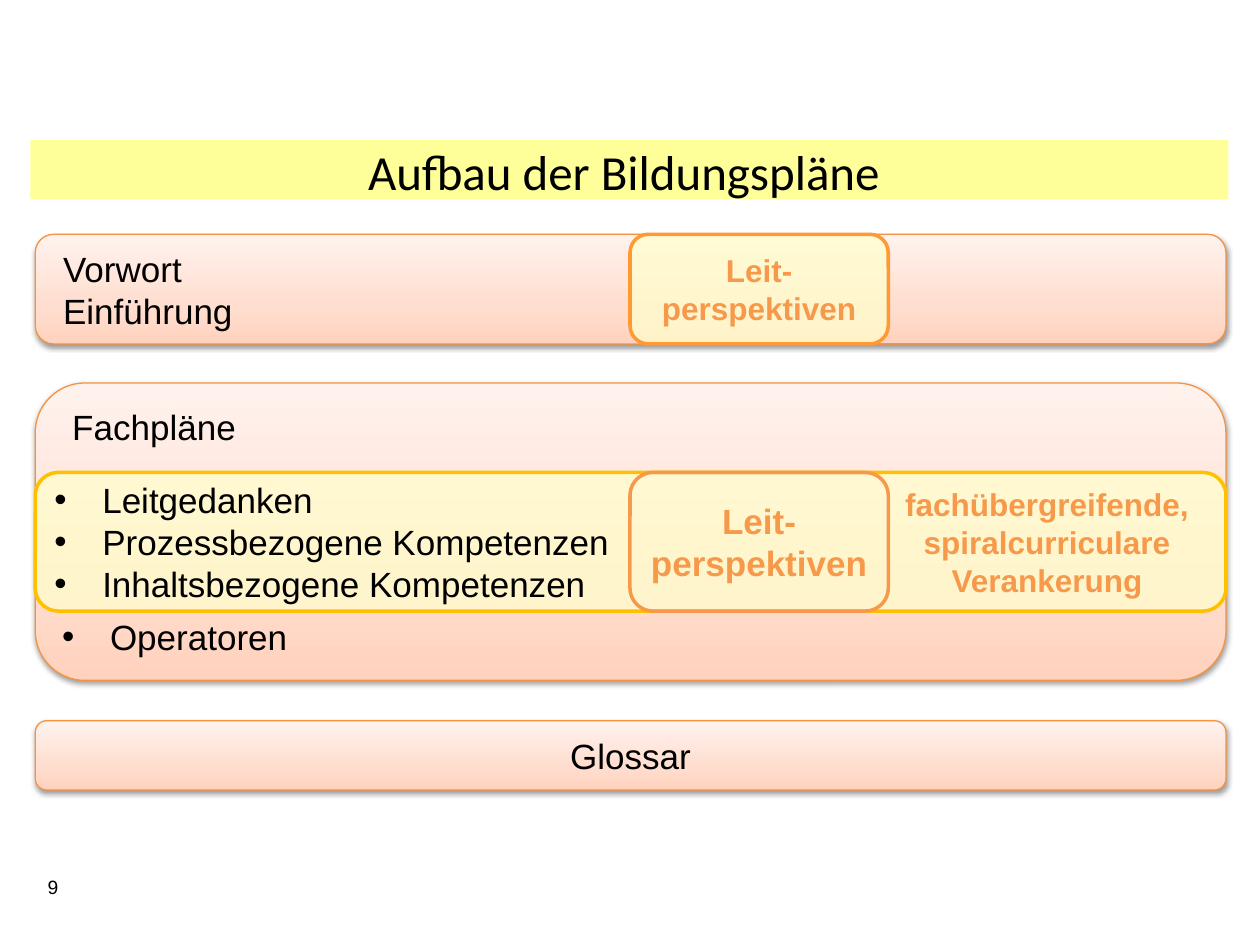
import copy

import pptx
import pptx.dml.color
import pptx.enum.shapes
import pptx.enum.text
import pptx.oxml
import pptx.oxml.ns
import pptx.util
from pptx.util import Inches

ALIGN = pptx.enum.text.PP_ALIGN
ANCHOR = pptx.enum.text.MSO_ANCHOR
SHAPE = pptx.enum.shapes.MSO_SHAPE
qn = pptx.oxml.ns.qn

BLACK, ORANGE, CREAM = "000000", "F7994B", "FFFFCC"
PEACH_STOPS = [(0, "FFD2BD"), (0.35, "FFDED0"), (1, "FFF2ED")]
LEFT, WIDTH = 0.28, 9.45
LEIT_LEFT, LEIT_WIDTH = 5, 2.05


def color(value):
    return pptx.dml.color.RGBColor.from_string(value)


def add_box(s, box, line=None, line_width=2, kind=SHAPE.ROUNDED_RECTANGLE):
    """Add an unfilled, unshadowed shape; box is left, top, width, height in inches."""
    sp = s.shapes.add_shape(kind, *map(Inches, box))
    sp.shadow.inherit = False
    sp.fill.background()
    if line:
        sp.line.color.rgb = color(line)
        sp.line.width = pptx.util.Pt(line_width)
    else:
        sp.line.fill.background()
    sp.text_frame.vertical_anchor = ANCHOR.MIDDLE
    return sp


def fill_cream(sp):
    """Fill with cream at 72 % opacity."""
    sp.fill.solid()
    sp.fill.fore_color.rgb = color(CREAM)
    srgb = sp._element.spPr.find(qn("a:solidFill")).find(qn("a:srgbClr"))
    srgb.append(pptx.oxml.parse_xml(
        f'<a:alpha {pptx.oxml.ns.nsdecls("a")} val="72000"/>'))


def add_panel(s, box):
    """Add a peach gradient panel with a soft shadow below it."""
    sp = add_box(s, box, "F69240", 0.75)
    sp.fill.gradient()
    sp.fill.gradient_angle = 90
    stops = sp._element.spPr.find(qn("a:gradFill")).find(qn("a:gsLst"))
    stops.append(copy.deepcopy(stops[0]))
    for stop, (position, value) in zip(sp.fill.gradient_stops, PEACH_STOPS):
        stop.position = position
        stop.color.rgb = color(value)
    sp._element.spPr.find(qn("a:effectLst")).append(pptx.oxml.parse_xml(
        f'<a:outerShdw {pptx.oxml.ns.nsdecls("a")} blurRad="40000" dist="20000" '
        'dir="5400000" rotWithShape="0"><a:srgbClr val="000000">'
        '<a:alpha val="38000"/></a:srgbClr></a:outerShdw>'))
    return sp


def write(tf, lines, size=20, value=BLACK, bold=False, align=ALIGN.LEFT, font="Arial"):
    """Write one paragraph per line and return the paragraphs."""
    tf.word_wrap = True
    for i, line in enumerate(lines):
        p = tf.paragraphs[0] if i == 0 else tf.add_paragraph()
        p.alignment = align
        r = p.add_run()
        r.text = line
        r.font.name = font
        r.font.size = pptx.util.Pt(size)
        r.font.bold = bold
        r.font.color.rgb = color(value)
    return tf.paragraphs


def indent(p, left, bullet=False):
    pPr = p._p.get_or_add_pPr()
    pPr.set("marL", str(Inches(left)))
    if bullet:
        pPr.set("indent", str(-Inches(left)))
        for tag, attr, val in (("a:buFont", "typeface", "Arial"),
                               ("a:buChar", "char", "•")):
            pPr.append(pptx.oxml.parse_xml(
                f'<{tag} {pptx.oxml.ns.nsdecls("a")} {attr}="{val}"/>'))


def write_accent(sp, lines, size, side_inset=0.1):
    tf = sp.text_frame
    tf.margin_left = tf.margin_right = Inches(side_inset)
    write(tf, lines, size, ORANGE, True, ALIGN.CENTER)


def add_title(s, left, top, width):
    band = add_box(s, (left, top, width, 0.47), kind=SHAPE.RECTANGLE)
    band.fill.solid()
    band.fill.fore_color.rgb = color("FFFF99")
    s.shapes._spTree.insert(2, band._element)  # behind the title
    title = s.shapes.title
    title.left, title.top = Inches(left), Inches(top - 0.04)
    title.width, title.height = Inches(width), Inches(0.57)
    title.text_frame.vertical_anchor = ANCHOR.TOP
    title.text_frame.auto_size = pptx.enum.text.MSO_AUTO_SIZE.NONE
    write(title.text_frame, ["Aufbau der Bildungspläne "], 28,
          align=ALIGN.CENTER, font="Calibri")


def add_introduction(s, top, height):
    panel = add_panel(s, (LEFT, top, WIDTH, height))
    for p in write(panel.text_frame, ["Vorwort", "Einführung"]):
        indent(p, 0.08)
    leit = add_box(s, (LEIT_LEFT, top, LEIT_WIDTH, height), "FF9933")
    fill_cream(leit)
    write_accent(leit, ["Leit-", "perspektiven"], 18)


def add_subject_plans(s, top, height):
    panel = add_panel(s, (LEFT, top, WIDTH, height))
    heading, operators = write(panel.text_frame, ["Fachpläne", "Operatoren"])
    indent(heading, 0.08)
    operators.space_before = pptx.util.Pt(96)  # room for the inner band
    indent(operators, 0.38, bullet=True)

    band_top, band_height = top + 0.71, 1.1
    band = add_box(s, (LEFT, band_top, WIDTH, band_height), "FFC000")
    fill_cream(band)
    for p in write(band.text_frame, ["Leitgedanken", "Prozessbezogene Kompetenzen",
                                     "Inhaltsbezogene Kompetenzen"]):
        indent(p, 0.38, bullet=True)
    leit = add_box(s, (LEIT_LEFT, band_top, LEIT_WIDTH, band_height), ORANGE)
    write_accent(leit, ["Leit-perspektiven"], 20, 0)
    anchoring = add_box(s, (7.13, band_top + 0.08, 2.36, band_height - 0.16))
    write_accent(anchoring, ["fachübergreifende,", "spiralcurriculare Verankerung"], 18, 0)


def add_glossary(s, top, height):
    panel = add_panel(s, (LEFT, top, WIDTH, height))
    write(panel.text_frame, ["Glossar"], align=ALIGN.CENTER)


def add_page_number(s, left, top):
    sp = s.shapes.add_textbox(Inches(left), Inches(top), Inches(0.55), Inches(0.29))
    write(sp.text_frame, ["9"], 11)


def main():
    prs = pptx.Presentation()
    prs.slide_width, prs.slide_height = Inches(10), Inches(7.5)
    s = prs.slides.add_slide(prs.slide_layouts[5])
    add_title(s, 0.24, 1.11, 9.51)
    add_introduction(s, 1.86, 0.87)
    add_subject_plans(s, 3.04, 2.36)
    add_glossary(s, 5.72, 0.55)
    add_page_number(s, LEFT, 6.9)
    prs.save("out.pptx")


if __name__ == "__main__":
    main()
